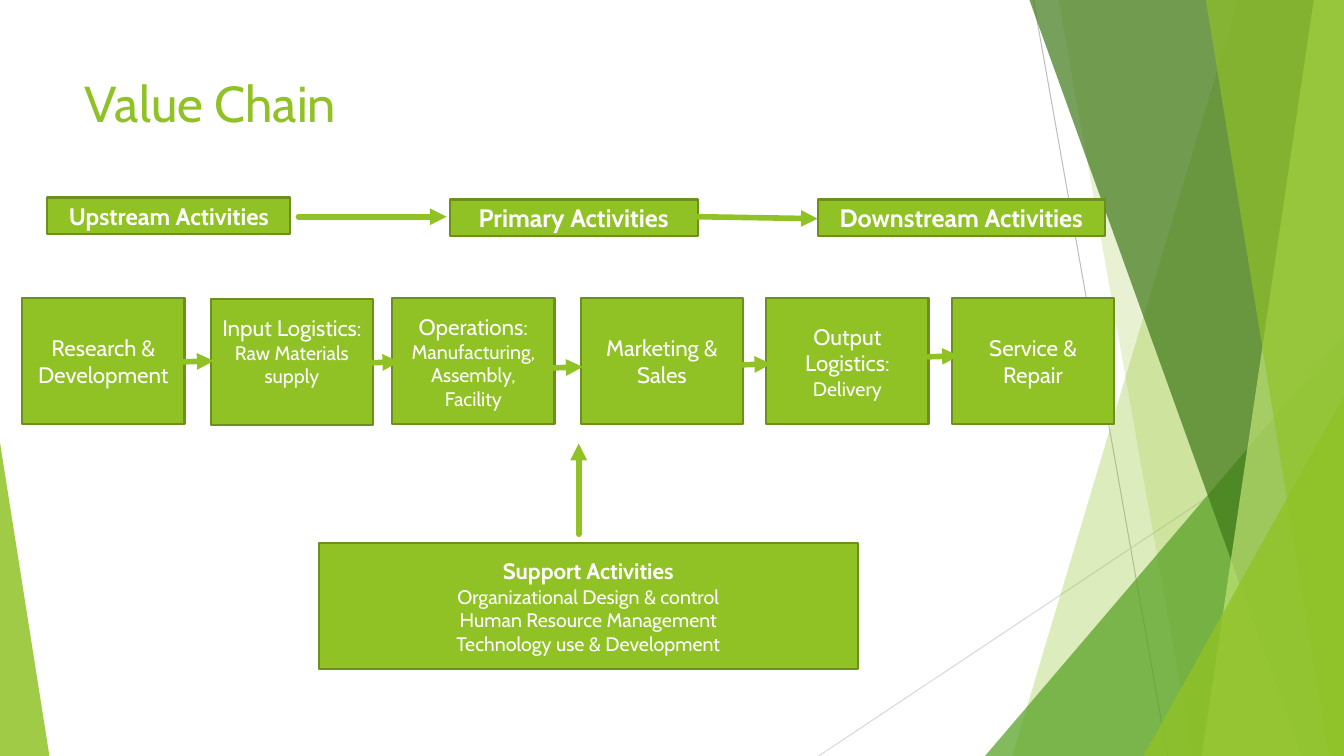
from lxml import etree
from pptx import Presentation
from pptx.dml.color import RGBColor
from pptx.enum.shapes import MSO_CONNECTOR, MSO_SHAPE
from pptx.enum.text import MSO_ANCHOR, PP_ALIGN
from pptx.oxml.ns import qn
from pptx.util import Inches, Pt

RECT = MSO_SHAPE.RECTANGLE
TRIANGLE = MSO_SHAPE.ISOSCELES_TRIANGLE
STRAIGHT = MSO_CONNECTOR.STRAIGHT
TOP, MIDDLE = MSO_ANCHOR.TOP, MSO_ANCHOR.MIDDLE
LEFT, CENTER = PP_ALIGN.LEFT, PP_ALIGN.CENTER

COLORS = {
    "lime": "90C226", "edge": "6B901C", "white": "FFFFFF", "leaf": "54A021",
    "forest": "3F7819", "pale": "C0E474", "gray": "BFBFBF", "silver": "D9D9D9",
}
WIDTH, HEIGHT = 13.33, 7.5
BIG, SMALL = 16, 14


class Deck:
    font = "Cabin"

    def __init__(self):
        self.prs = Presentation()
        self.prs.slide_width = Inches(WIDTH)
        self.prs.slide_height = Inches(HEIGHT)
        self.slide = self.prs.slides.add_slide(self.prs.slide_layouts[6])
        self.shapes = self.slide.shapes

    def color(self, name):
        return RGBColor.from_string(COLORS[name])

    def paint(self, shape, name, alpha=100):
        """Fill a shape, with alpha as percent opacity, and drop its shadow."""
        shape.shadow.inherit = False
        shape.fill.solid()
        shape.fill.fore_color.rgb = self.color(name)
        if alpha < 100:
            tint = shape.element.spPr.find(".//" + qn("a:srgbClr"))
            etree.SubElement(tint, qn("a:alpha"), val=str(alpha * 1000))

    def facet(self, points, name, alpha):
        """Draw a see-through polygon of the backdrop."""
        start, *rest = [(Inches(x), Inches(y)) for x, y in points]
        pen = self.shapes.build_freeform(*start)
        pen.add_line_segments(rest, close=True)
        shape = pen.convert_to_shape()
        self.paint(shape, name, alpha)
        shape.line.fill.background()

    def wedge(self, box, apex, name, alpha):
        """Draw a see-through triangle; apex is 0 for left, 1 for right."""
        shape = self.shapes.add_shape(TRIANGLE, *map(Inches, box))
        shape.adjustments[0] = apex
        self.paint(shape, name, alpha)
        shape.line.fill.background()

    def line(self, start, end, name, width):
        line = self.shapes.add_connector(STRAIGHT, *map(Inches, start + end))
        line.line.color.rgb = self.color(name)
        line.line.width = Pt(width)
        etree.SubElement(line.element.spPr, qn("a:effectLst"))
        return line

    def arrow(self, start, end):
        line = self.line(start, end, "lime", 4)
        stroke = line.element.spPr.find(qn("a:ln"))
        stroke.set("cap", "rnd")
        etree.SubElement(stroke, qn("a:tailEnd"), type="triangle")

    def text(self, frame, paras, name, align, anchor):
        """Fill a text frame; each paragraph is a list of (text, size, bold)."""
        frame.word_wrap = True
        frame.vertical_anchor = anchor
        for i, runs in enumerate(paras):
            para = frame.add_paragraph() if i else frame.paragraphs[0]
            para.alignment = align
            for words, size, bold in runs:
                run = para.add_run()
                run.text = words
                run.font.name = self.font
                run.font.size = Pt(size)
                run.font.bold = bold
                run.font.color.rgb = self.color(name)

    def title(self, words, box):
        shape = self.shapes.add_textbox(*map(Inches, box))
        self.text(shape.text_frame, [[(words, 36, False)]], "lime", LEFT, TOP)

    def box(self, box, paras, foot=0.05):
        """Draw a bordered box of text; foot is its bottom inset."""
        shape = self.shapes.add_shape(RECT, *map(Inches, box))
        self.paint(shape, "lime")
        shape.line.color.rgb = self.color("edge")
        shape.line.width = Pt(1.5)
        shape.text_frame.margin_bottom = Inches(foot)
        self.text(shape.text_frame, paras, "white", CENTER, MIDDLE)


def draw_back(deck):
    deck.line((10.25, 0), (11.58, HEIGHT), "gray", 0.75)
    deck.line((WIDTH, 4.03), (8.12, HEIGHT), "silver", 0.75)

    def band(top, foot, name, alpha):
        """Draw a facet from a slanted left side to the slide's right edge."""
        deck.facet([(top, 0), (WIDTH, 0), (WIDTH, HEIGHT), (foot, HEIGHT)],
                   name, alpha)

    band(12.28, 10.04, "lime", 30)
    band(10.5, 11.83, "lime", 20)
    deck.wedge((9.77, 3.33, 3.56, 4.17), 1, "leaf", 72)
    band(10.21, 12.91, "forest", 70)
    band(13.03, 11.92, "pale", 70)
    band(11.96, 13.18, "lime", 65)
    deck.wedge((11.34, 3.93, 1.99, 3.57), 1, "lime", 80)
    deck.wedge((0, 4.39, 0.49, 3.11), 0, "lime", 85)


def draw_chain(deck):
    phases = [
        ("Upstream Activities", 0.47, 1.96, 2.41, 17),
        ("Primary Activities", 4.46, 1.98, 2.46, 18),
        ("Downstream Activities", 8.11, 1.98, 2.85, 18),
    ]
    for words, x, y, width, size in phases:
        deck.box((x, y, width, 0.36), [[(words, size, True)]])
    deck.arrow((2.96, 2.15), (4.43, 2.15))
    deck.arrow((6.92, 2.15), (8.11, 2.17))

    stages = [
        (0.22, 2.96, [[("Research & Development", BIG, False)]], 0.05),
        (2.09, 2.97, [[("Input Logistics:", BIG, False)],
                      [("Raw Materials supply", SMALL, False)]], 0.28),
        (3.89, 2.96, [[("Operations:", BIG, False)],
                      [("Manufacturing, Assembly, Facility", SMALL, False)]], 0.05),
        (5.76, 2.96, [[("Marketing & Sales", BIG, False)]], 0.05),
        (7.6, 2.96, [[("Output Logistics: ", BIG, False),
                      ("Delivery", SMALL, False)]], 0.05),
        (9.44, 2.96, [[("Service & Repair", BIG, False)]], 0.05),
    ]
    for x, y, paras, foot in stages:
        deck.box((x, y, 1.61, 1.25), paras, foot)

    support = ["Organizational Design & control", "Human Resource Management",
               "Technology use & Development"]
    deck.box((3.16, 5.39, 5.35, 1.25),
             [[("Support Activities", BIG, True)]]
             + [[(words, SMALL, False)] for words in support])
    deck.arrow((5.74, 5.3), (5.74, 4.4))

    links = [(1.82, 3.59), (3.66, 3.6), (5.48, 3.65), (7.35, 3.62), (9.21, 3.54)]
    for x, y in links:
        deck.arrow((x, y), (x + 0.3, y - 0.01))


def main():
    deck = Deck()
    draw_back(deck)
    deck.title("Value Chain", (0.74, 0.67, 9.4, 1.44))
    draw_chain(deck)
    deck.prs.save("out.pptx")


if __name__ == "__main__":
    main()
